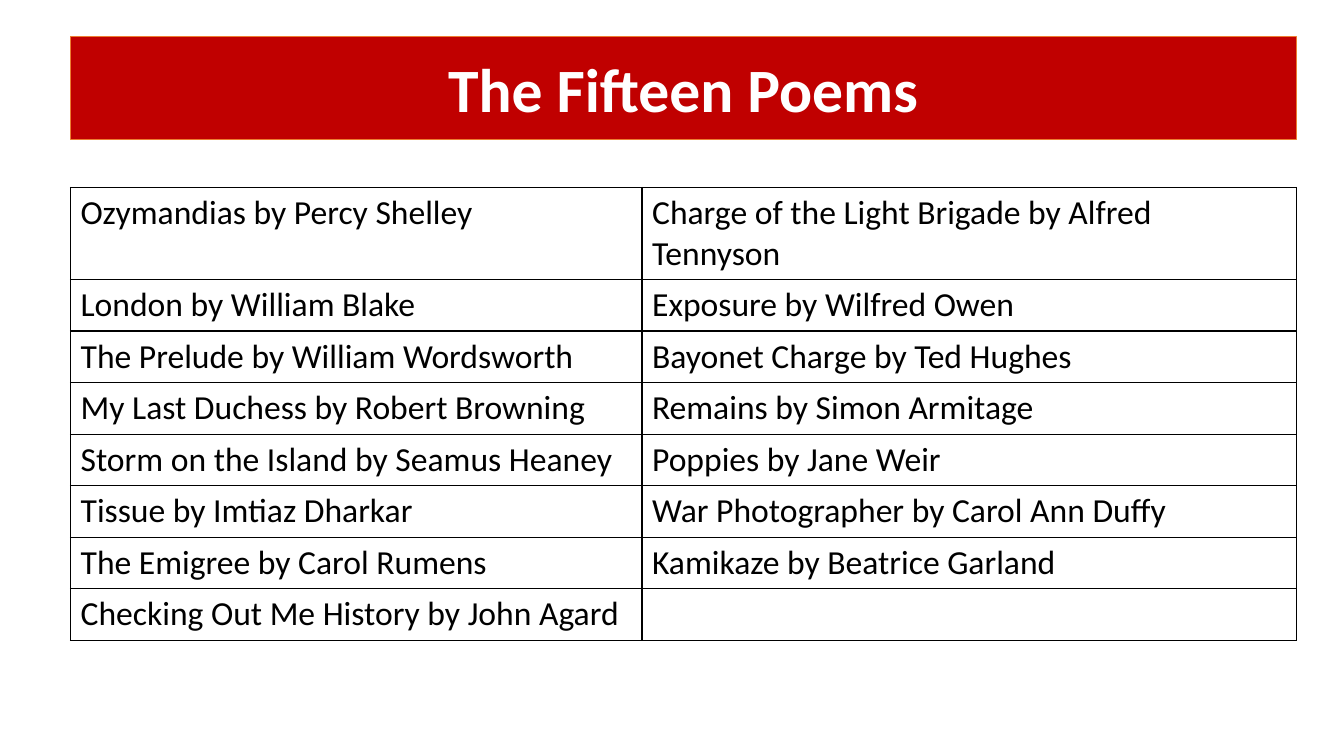
"""Build the slide that lists the fifteen poems in a two-column table."""
import pptx
import pptx.util
import pptx.dml.color
import pptx.enum.text
import pptx.oxml
import pptx.oxml.ns

Pt = pptx.util.Pt
TITLE = "The Fifteen Poems"
POEMS = [
    ("Ozymandias by Percy Shelley", "Charge of the Light Brigade by Alfred Tennyson"),
    ("London by William Blake", "Exposure by Wilfred Owen"),
    ("The Prelude by William Wordsworth", "Bayonet Charge by Ted Hughes"),
    ("My Last Duchess by Robert Browning", "Remains by Simon Armitage"),
    ("Storm on the Island by Seamus Heaney", "Poppies by Jane Weir"),
    ("Tissue by Imtiaz Dharkar", "War Photographer by Carol Ann Duffy"),
    ("The Emigree by Carol Rumens", "Kamikaze by Beatrice Garland"),
    ("Checking Out Me History by John Agard", ""),
]
FONT = "Calibri"
LEFT = 50.4
COLS = (408.2, 467.3)
WIDTH = sum(COLS)
ROW = 36.8


def paint(color, code):
    color.rgb = pptx.dml.color.RGBColor.from_string(code)


def style(para, size, code, bold=False):
    font = para.font
    font.name, font.size, font.bold = FONT, Pt(size), bold
    paint(font.color, code)


def border(cell, code, width):
    props = cell._tc.get_or_add_tcPr()
    for side in ("lnL", "lnR", "lnT", "lnB"):
        props.append(pptx.oxml.parse_xml(
            f'<a:{side} {pptx.oxml.ns.nsdecls("a")} w="{Pt(width)}">'
            f'<a:solidFill><a:srgbClr val="{code}"/></a:solidFill></a:{side}>'))


def add_title(slide):
    title = slide.shapes.title
    title.left, title.top = Pt(LEFT), Pt(26)
    title.width, title.height = Pt(WIDTH), Pt(73.4)
    title.fill.solid()
    paint(title.fill.fore_color, "C00000")
    paint(title.line.color, "ED7D31")
    title.line.width = Pt(0.5)
    frame = title.text_frame
    frame.text = TITLE
    frame.vertical_anchor = pptx.enum.text.MSO_ANCHOR.MIDDLE
    para = frame.paragraphs[0]
    para.alignment = pptx.enum.text.PP_ALIGN.CENTER
    style(para, 44, "FFFFFF", True)


def add_poems(slide):
    count = len(POEMS)
    table = slide.shapes.add_table(
        count, len(COLS), Pt(LEFT), Pt(133.9), Pt(WIDTH), Pt(ROW * count)).table
    table.first_row = table.horz_banding = False
    for col, width in zip(table.columns, COLS):
        col.width = Pt(width)
    for row, poems in zip(table.rows, POEMS):
        row.height = Pt(ROW)
        for cell, poem in zip(row.cells, poems):
            cell.text = poem
            style(cell.text_frame.paragraphs[0], 24, "000000")
            border(cell, "000000", 1)
            cell.fill.background()


def main():
    deck = pptx.Presentation()
    deck.slide_width, deck.slide_height = Pt(960), Pt(540)
    slide = deck.slides.add_slide(deck.slide_layouts.get_by_name("Title Only"))
    add_title(slide)
    add_poems(slide)
    deck.save("out.pptx")


if __name__ == "__main__":
    main()
